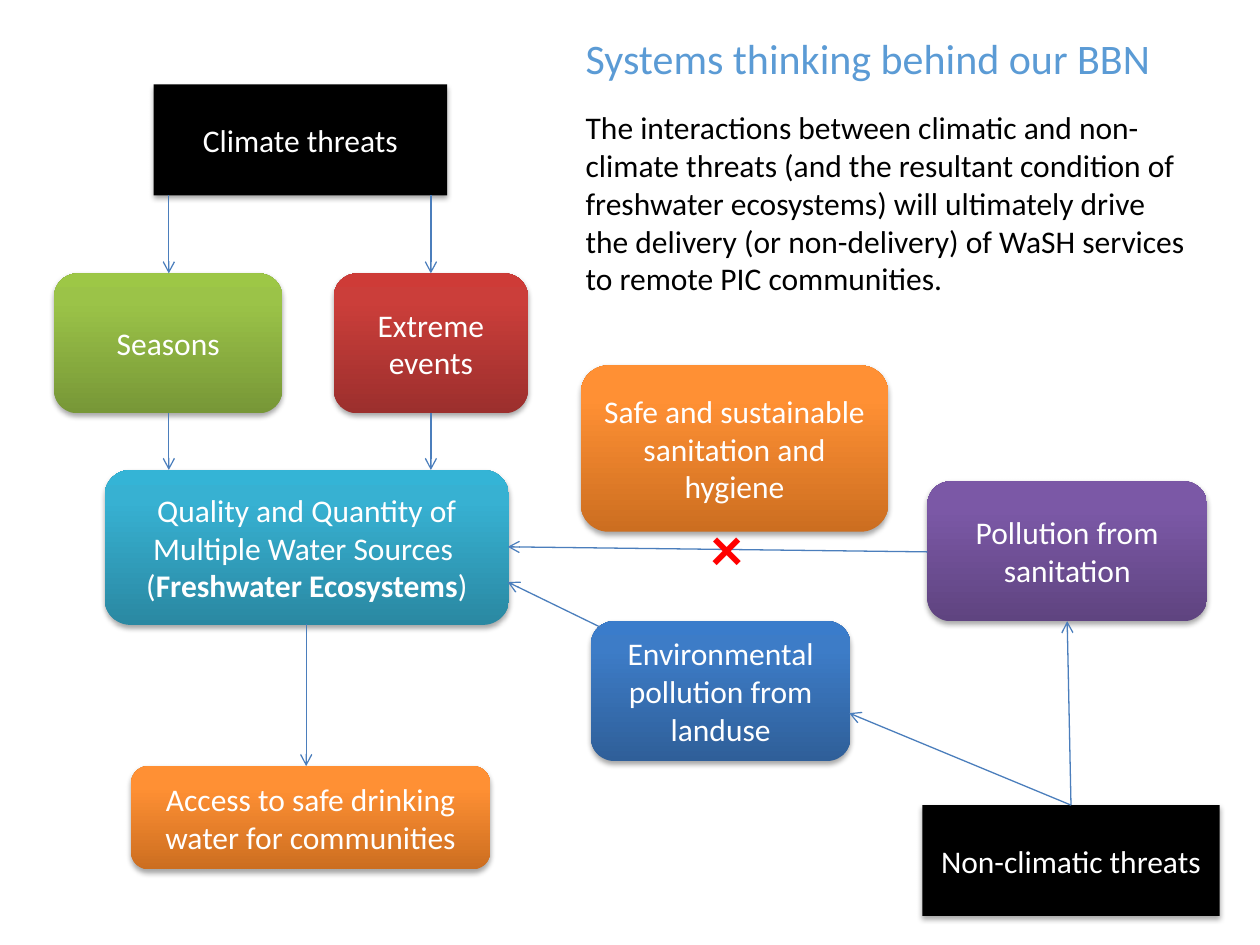
from dataclasses import dataclass

from lxml.etree import SubElement
from pptx import Presentation
from pptx.dml.color import RGBColor as RGB
from pptx.enum.shapes import MSO_CONNECTOR as Link, MSO_SHAPE as Kind
from pptx.enum.text import MSO_ANCHOR as Anchor, PP_ALIGN as Align
from pptx.oxml.ns import qn
from pptx.util import Inches, Pt


@dataclass
class Theme:
    font: str = "Calibri"
    body: int = 18
    head: int = 24
    mark: int = 36
    white: str = "FFFFFF"
    black: str = "000000"
    red: str = "FF0000"
    title: str = "5B9BD5"
    line: str = "4B7EBC"
    # Gradients run from the bottom edge to the top
    teal: tuple = ("2A88A2", "37B1D2", "34B4D6")
    green: tuple = ("779737", "9BC348", "9DC746")
    brick: tuple = ("9C2F2D", "CB3E3A", "CE3B37")
    blue: tuple = ("2F5F99", "3D7CC7", "3A7CCB")
    plum: tuple = ("5F4480", "7B58A6", "7C57A8")
    amber: tuple = ("CC6E20", "FF9034", "FF9136")


theme = Theme()
deck = Presentation()
deck.slide_width, deck.slide_height = Inches(10), Inches(7.5)
slide = deck.slides.add_slide(deck.slide_layouts[6])


def write(frame, paras, size, color, align=Align.LEFT):
    """Each paragraph is a list of (text, bold) runs."""
    for i, runs in enumerate(paras):
        para = frame.paragraphs[0] if i == 0 else frame.add_paragraph()
        para.alignment = align
        for text, bold in runs:
            run = para.add_run()
            run.text = text
            font = run.font
            font.name, font.size, font.bold = theme.font, Pt(size), bold
            font.color.rgb = RGB.from_string(color)


def add_box(place, fill, paras):
    """Black threats are square; graded boxes are rounded."""
    graded = isinstance(fill, tuple)
    kind = Kind.ROUNDED_RECTANGLE if graded else Kind.RECTANGLE
    box = slide.shapes.add_shape(kind, *map(Inches, place))
    box.line.fill.background()
    if graded:
        box.fill.gradient()
        grad = box._element.spPr.find(qn("a:gradFill"))
        for child in list(grad):
            grad.remove(child)
        stops = SubElement(grad, qn("a:gsLst"))
        for pos, color in zip((0, 80, 100), fill):
            stop = SubElement(stops, qn("a:gs"), pos=str(pos * 1000))
            SubElement(stop, qn("a:srgbClr"), val=color)
        SubElement(grad, qn("a:lin"), ang="16200000", scaled="0")
    else:
        box.fill.solid()
        box.fill.fore_color.rgb = RGB.from_string(fill)

    # Soft shadow below
    box.shadow.inherit = False
    effects = box._element.spPr.find(qn("a:effectLst"))
    shade = SubElement(effects, qn("a:outerShdw"), blurRad="40000",
                       dist="23000", dir="5400000", rotWithShape="0")
    tint = SubElement(shade, qn("a:srgbClr"), val=theme.black)
    SubElement(tint, qn("a:alpha"), val="35000")

    frame = box.text_frame
    frame.word_wrap = True
    frame.vertical_anchor = Anchor.MIDDLE
    write(frame, paras, theme.body, theme.white, Align.CENTER)


# Threats and the factors they drive
add_box((0.83, 3.73, 3.21, 1.23), theme.teal, [
    [("Quality and Quantity of Multiple Water Sources ", False)],
    [("(", False), ("Freshwater Ecosystems", True), (")", False)],
])
for place, fill, text in [
    ((0.43, 2.17, 1.81, 1.11), theme.green, "Seasons"),
    ((2.65, 2.17, 1.54, 1.11), theme.brick, "Extreme events"),
    ((4.69, 4.93, 2.06, 1.11), theme.blue,
     "Environmental pollution from landuse"),
    ((7.36, 3.82, 2.22, 1.11), theme.plum, "Pollution from sanitation"),
    ((1.22, 0.67, 2.33, 0.88), theme.black, "Climate threats"),
    ((7.32, 6.39, 2.36, 0.88), theme.black, "Non-climatic threats"),
]:
    add_box(place, fill, [[(text, False)]])

# Arrows: two climate columns, then the single links
falls = [(x, top, x, end) for top, end in ((1.55, 2.17), (3.28, 3.73))
         for x in (1.34, 3.42)]
links = [
    (8.5, 6.39, 6.74, 5.66),
    (8.5, 6.39, 8.47, 4.93),
    (4.77, 4.98, 4.03, 4.62),
    (7.36, 4.38, 4.03, 4.34),
    (2.43, 4.95, 2.43, 6.08),
]
for ends in falls + links:
    arrow = slide.shapes.add_connector(Link.STRAIGHT, *map(Inches, ends))
    arrow.line.color.rgb = RGB.from_string(theme.line)
    arrow.line.width = Pt(0.75)
    SubElement(arrow.line._get_or_add_ln(), qn("a:tailEnd"), type="arrow")
    SubElement(arrow._element.spPr, qn("a:effectLst"))

# Service outcomes
for place, text in [
    ((4.61, 2.9, 2.44, 1.32), "Safe and sustainable sanitation and hygiene"),
    ((1.04, 6.08, 2.85, 0.82),
     "Access to safe drinking water for communities"),
]:
    add_box(place, theme.amber, [[(text, False)]])

# Blocked-link mark, message and title
for place, text, size, color, bold, wrap in [
    ((5.55, 3.99, 0.55, 0.71), "×", theme.mark, theme.red, True, True),
    ((4.55, 0.81, 5, 1.62),
     "The interactions between climatic and non-climate threats (and the "
     "resultant condition of freshwater ecosystems) will ultimately drive "
     "the delivery (or non-delivery) of WaSH services to remote PIC "
     "communities.", theme.body, theme.black, False, True),
    ((4.55, 0.21, 5.1, 0.5), "Systems thinking behind our BBN",
     theme.head, theme.title, False, False),
]:
    frame = slide.shapes.add_textbox(*map(Inches, place)).text_frame
    frame.word_wrap = wrap
    write(frame, [[(text, bold)]], size, color)

deck.save("out.pptx")
